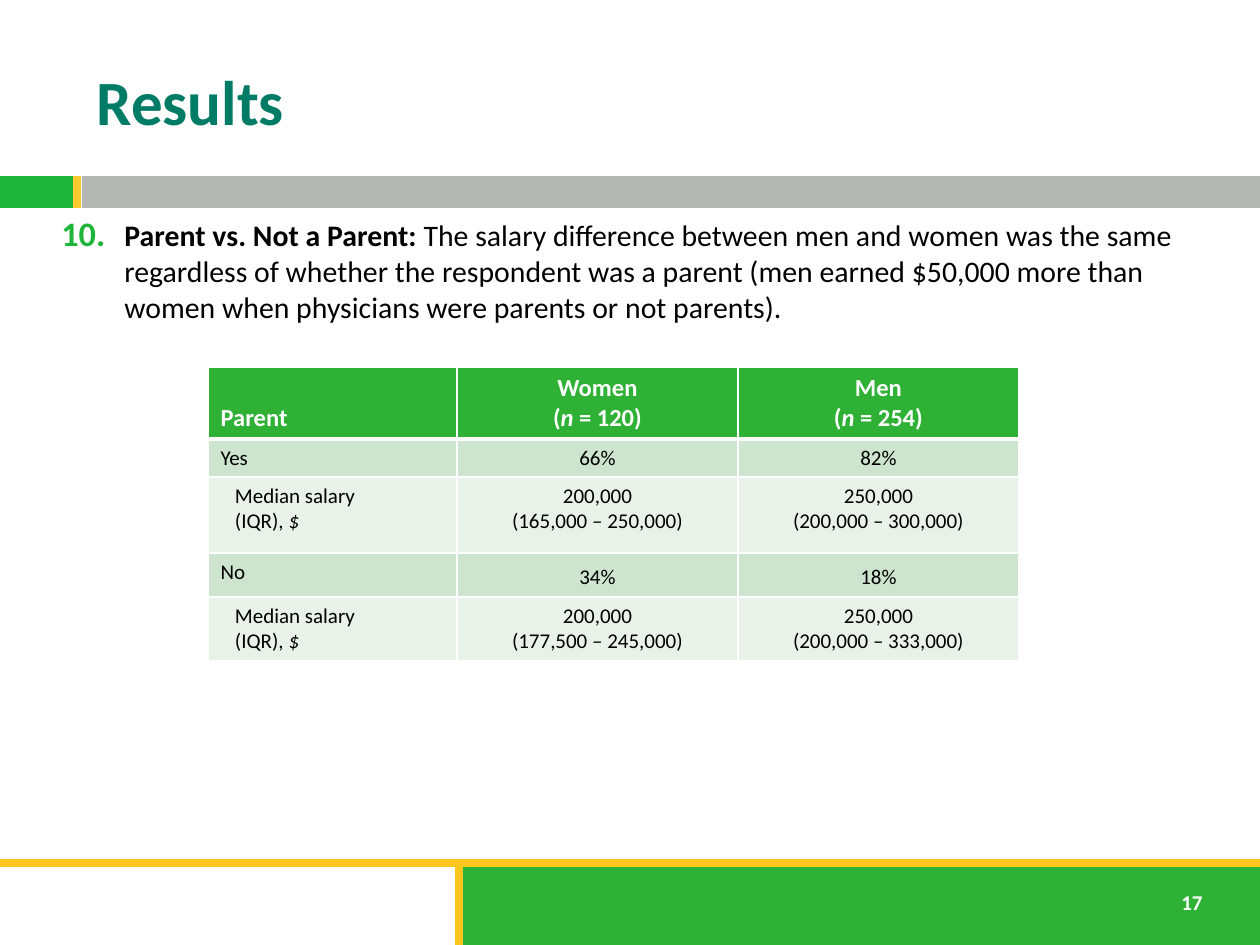
"""Builds the Results slide on salary by parenthood."""
from lxml.etree import SubElement
from pptx import Presentation
from pptx.dml.color import RGBColor
from pptx.enum.shapes import MSO_CONNECTOR, MSO_SHAPE
from pptx.enum.text import MSO_ANCHOR, PP_ALIGN
from pptx.oxml.ns import qn
from pptx.util import Pt

WHITE = RGBColor(0xFF, 0xFF, 0xFF)
BLACK = RGBColor(0, 0, 0)
TEAL = RGBColor(0x00, 0x7C, 0x66)
LIME = RGBColor(0x1E, 0xB5, 0x3A)
GREEN = RGBColor(0x2E, 0xB1, 0x35)
GREY = RGBColor(0xB5, 0xB7, 0xB4)
GOLD = RGBColor(0xFF, 0xC6, 0x1E)
AMBER = RGBColor(0xFF, 0xC8, 0x2E)
MINT = RGBColor(0xCD, 0xE4, 0xCE)
PALE = RGBColor(0xE8, 0xF2, 0xE8)
FONT = "Calibri"
SCALE = 914400 / 126


def px(*sizes):
    return [round(size * SCALE) for size in sizes]


class Deck:
    def __init__(self, wide, high):
        self.prs = Presentation()
        self.prs.slide_width, self.prs.slide_height = px(wide, high)
        self.slide = self.prs.slides.add_slide(self.prs.slide_layouts[5])
        self.shapes = self.slide.shapes

    def bar(self, box, color):
        bar = self.shapes.add_shape(MSO_SHAPE.RECTANGLE, *px(*box))
        bar.shadow.inherit = False
        bar.fill.solid()
        bar.fill.fore_color.rgb = color
        bar.line.fill.background()

    def line(self, ends, color):
        line = self.shapes.add_connector(MSO_CONNECTOR.STRAIGHT, *px(*ends))
        line.line.color.rgb = color
        line.line.width = Pt(4.5)
        SubElement(line.element.spPr, qn("a:effectLst"))

    def runs(self, para, runs, size, color, bold=False):
        for text, *marks in runs:
            run = para.add_run()
            run.text = text
            font = run.font
            font.name, font.size = FONT, Pt(size)
            font.color.rgb = color
            font.bold = bold or "bold" in marks
            font.italic = "italic" in marks

    def title(self, box, text):
        title = self.shapes.title
        title.left, title.top, title.width, title.height = px(*box)
        title.text_frame.vertical_anchor = MSO_ANCHOR.MIDDLE
        para = title.text_frame.paragraphs[0]
        para.alignment = PP_ALIGN.LEFT
        self.runs(para, [(text,)], 36, TEAL, True)

    def text(self, box, runs, size, color, wrap=True):
        frame = self.shapes.add_textbox(*px(*box)).text_frame
        frame.word_wrap = wrap
        para = frame.paragraphs[0]
        self.runs(para, runs, size, color)
        return para

    def number(self, para, start, color, indent):
        props = para._p.get_or_add_pPr()
        [step] = px(indent)
        props.set("marL", str(step))
        props.set("indent", str(-step))
        tint = SubElement(props, qn("a:buClr"))
        SubElement(tint, qn("a:srgbClr"), val=str(color))
        SubElement(props, qn("a:buSzPct"), val="115000")
        SubElement(props, qn("a:buFont"), typeface=FONT)
        SubElement(props, qn("a:buAutoNum"), type="arabicPeriod", startAt=str(start))

    def edge(self, cell, side, width):
        props = cell._tc.get_or_add_tcPr()
        edge = SubElement(props, qn(f"a:ln{side}"), w=str(Pt(width)))
        fill = SubElement(edge, qn("a:solidFill"))
        SubElement(fill, qn("a:srgbClr"), val=str(WHITE))

    def cell(self, cell, lines, row, col):
        head = row == 0
        for side in "LRTB":
            thick = (row, side) in ((0, "B"), (1, "T"))
            self.edge(cell, side, 3 if thick else 1)
        cell.fill.solid()
        cell.fill.fore_color.rgb = GREEN if head else MINT if row % 2 else PALE
        low = head or (col and len(lines) == 1)
        cell.vertical_anchor = MSO_ANCHOR.BOTTOM if low else MSO_ANCHOR.TOP
        if not col and len(lines) > 1:
            [cell.margin_left] = px(27)
        frame = cell.text_frame
        for spot, runs in enumerate(lines):
            para = frame.add_paragraph() if spot else frame.paragraphs[0]
            para.alignment = PP_ALIGN.CENTER if col else PP_ALIGN.LEFT
            self.runs(para, runs, 14 if head else 12, WHITE if head else BLACK, head)

    def table(self, left, top, cols, rows, data):
        box = px(left, top, sum(cols), sum(rows))
        table = self.shapes.add_table(len(rows), len(cols), *box).table
        for col, width in zip(table.columns, px(*cols)):
            col.width = width
        for row, height in zip(table.rows, px(*rows)):
            row.height = height
        for row, items in enumerate(data):
            for col, lines in enumerate(items):
                self.cell(table.cell(row, col), lines, row, col)


def plain(*lines):
    return [[(line,)] for line in lines]


def group(name, count):
    return [[(name,)], [("(",), ("n", "italic"), (f" = {count})",)]]


def main():
    deck = Deck(1260, 945)
    deck.bar((0, 176, 73, 32), LIME)
    deck.bar((82, 176, 1178, 32), GREY)
    deck.bar((456, 862, 804, 83), GREEN)
    deck.line((0, 863, 1260, 863), GOLD)
    deck.line((459, 864, 459, 945), GOLD)
    deck.line((77, 176, 77, 208), AMBER)
    deck.text((1169, 883, 50, 38), [("17", "bold")], 12, WHITE, False)
    deck.title((84, 32, 1124, 136), "Results")

    median = [[("Median salary",)], [("(IQR), ",), ("$", "italic")]]
    data = [
        [plain("Parent"), group("Women", 120), group("Men", 254)],
        [plain("Yes"), plain("66%"), plain("82%")],
        [median, plain("200,000", "(165,000 – 250,000)"),
         plain("250,000", "(200,000 – 300,000)")],
        [plain("No"), plain("34%"), plain("18%")],
        [median, plain("200,000", "(177,500 – 245,000)"),
         plain("250,000", "(200,000 – 333,000)")],
    ]
    deck.table(208, 367, (249, 281, 281), (72, 38, 76, 44, 64), data)

    para = deck.text((49, 211, 1183, 121), [
        ("Parent vs. Not a Parent: ", "bold"),
        ("The salary difference between men and women was the same "
         "regardless of whether the respondent was a parent (men earned "
         "$50,000 more than women when physicians were parents or not "
         "parents).",),
    ], 17, BLACK)
    deck.number(para, 10, LIME, 63)
    deck.prs.save("out.pptx")


if __name__ == "__main__":
    main()
